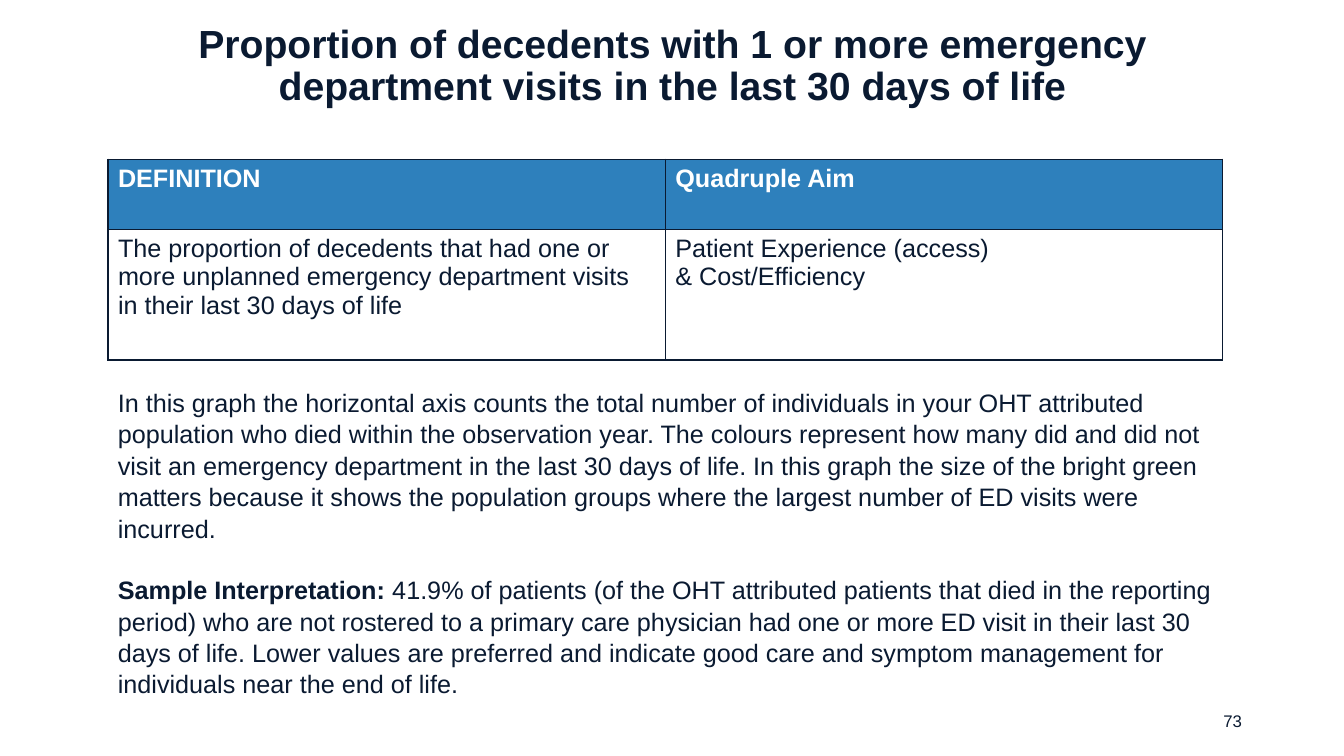
import pptx
import pptx.dml.color
import pptx.enum.text
import pptx.oxml
import pptx.oxml.ns
import pptx.util

Cm = pptx.util.Cm
Pt = pptx.util.Pt
ALIGN = pptx.enum.text.PP_ALIGN
ANCHOR = pptx.enum.text.MSO_ANCHOR


def color(value):
    return pptx.dml.color.RGBColor.from_string(value)


class IndicatorSlide:
    """Holds the slide and its style, and adds each kind of element."""

    font, ink, header, white = "Arial", "0A1A31", "2E80BC", "FFFFFF"

    def __init__(self, deck):
        self.slide = deck.slides.add_slide(deck.slide_layouts[5])

    def format_run(self, run, size, ink, bold=False):
        run.font.name = self.font
        run.font.size = Pt(size)
        run.font.bold = bold
        run.font.color.rgb = color(ink)

    def title(self, wording, box):
        heading = self.slide.shapes.title
        heading.left, heading.top, heading.width, heading.height = map(Cm, box)
        frame = heading.text_frame
        frame.text = wording
        frame.word_wrap = True
        frame.auto_size = pptx.enum.text.MSO_AUTO_SIZE.NONE
        frame.vertical_anchor = ANCHOR.MIDDLE
        paragraph = frame.paragraphs[0]
        paragraph.alignment = ALIGN.CENTER
        paragraph.line_spacing = 0.9
        self.format_run(paragraph.runs[0], 28, self.ink, True)

    def text(self, paragraphs, box, size=18, align=ALIGN.LEFT,
             anchor=ANCHOR.TOP, spacing=1.0, gap=0):
        frame = self.slide.shapes.add_textbox(*map(Cm, box)).text_frame
        frame.word_wrap = True
        frame.vertical_anchor = anchor
        for index, pieces in enumerate(paragraphs):
            paragraph = frame.add_paragraph() if index else frame.paragraphs[0]
            paragraph.alignment = align
            paragraph.line_spacing = spacing
            if index:
                paragraph.space_before = Pt(gap)
            for wording, bold in pieces:
                run = paragraph.add_run()
                run.text = wording
                self.format_run(run, size, self.ink, bold)

    def border(self, cell):
        properties = cell._tc.get_or_add_tcPr()
        for side in ("lnL", "lnR", "lnT", "lnB"):
            properties.append(pptx.oxml.parse_xml(
                f'<a:{side} {pptx.oxml.ns.nsdecls("a")} w="12700"><a:solidFill>'
                f'<a:srgbClr val="{self.ink}"/></a:solidFill></a:{side}>'))

    def table(self, rows, heights, box):
        table = self.slide.shapes.add_table(
            len(rows), len(rows[0]), *map(Cm, box)).table
        for row_index, (wordings, height) in enumerate(zip(rows, heights)):
            is_header = row_index == 0
            table.rows[row_index].height = Cm(height)
            for column, wording in enumerate(wordings):
                cell = table.cell(row_index, column)
                cell.text_frame.text = wording
                self.border(cell)
                cell.fill.solid()
                cell.fill.fore_color.rgb = color(
                    self.header if is_header else self.white)
                for paragraph in cell.text_frame.paragraphs:
                    self.format_run(paragraph.runs[0], 18,
                                    self.white if is_header else self.ink,
                                    is_header)


def main():
    deck = pptx.Presentation()
    deck.slide_width, deck.slide_height = Cm(33.87), Cm(19.05)
    page = IndicatorSlide(deck)
    page.title("Proportion of decedents with 1 or more emergency department "
               "visits in the last 30 days of life", (1.96, 0.61, 29.97, 2.13))
    page.table(
        [("DEFINITION", "Quadruple Aim"),
         ("The proportion of decedents that had one or more unplanned "
          "emergency department visits in their last 30 days of life",
          "Patient Experience (access)\n& Cost/Efficiency")],
        (1.78, 3.28), (2.72, 4.01, 28.09, 5.06))
    reading = (
        "In this graph the horizontal axis counts the total number of "
        "individuals in your OHT attributed population who died within the "
        "observation year. The colours represent how many did and did not "
        "visit an emergency department in the last 30 days of life. In this "
        "graph the size of the bright green matters because it shows the "
        "population groups where the largest number of ED visits were incurred.")
    interpretation = (
        "41.9% of patients (of the OHT attributed patients that died in the "
        "reporting period) who are not rostered to a primary care physician "
        "had one or more ED visit in their last 30 days of life. Lower values "
        "are preferred and indicate good care and symptom management for "
        "individuals near the end of life.")
    page.text([[(reading, False)],
               [("Sample Interpretation: ", True), (interpretation, False)]],
              (2.72, 9.6, 28.09, 7.95), spacing=1.04, gap=21.6)
    page.text([[("73", False)]], (23.93, 17.65, 7.62, 1.02), size=12,
              align=ALIGN.RIGHT, anchor=ANCHOR.MIDDLE)
    deck.save("out.pptx")


if __name__ == "__main__":
    main()
